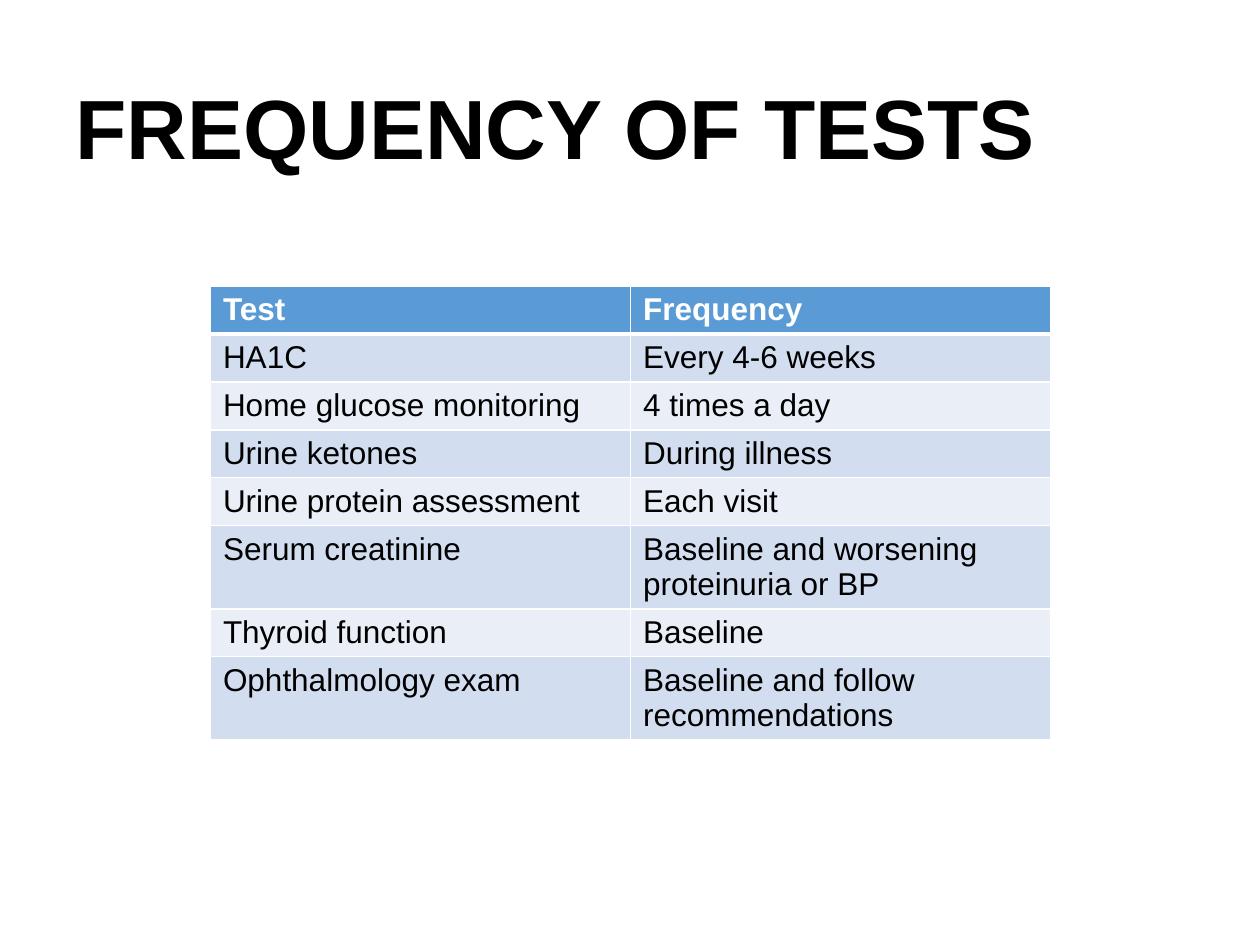
from dataclasses import dataclass

from lxml.etree import SubElement
from pptx import Presentation
from pptx.dml.color import RGBColor
from pptx.enum.text import MSO_ANCHOR, MSO_AUTO_SIZE, PP_ALIGN
from pptx.oxml.ns import qn
from pptx.util import Inches, Pt


@dataclass(frozen=True)
class Theme:
    face: str = "Arial"
    ink: str = "000000"
    paper: str = "FFFFFF"
    head: str = "5B9BD5"
    bands: tuple = ("D2DEEF", "EAEFF7")
    big: int = 48
    body: int = 18
    thin: int = 1
    thick: int = 3


THEME = Theme()
TITLE = "FREQUENCY OF TESTS"
TESTS = [
    ("Test", "Frequency"),
    ("HA1C", "Every 4-6 weeks"),
    ("Home glucose monitoring", "4 times a day"),
    ("Urine ketones", "During illness"),
    ("Urine protein assessment", "Each visit"),
    ("Serum creatinine", "Baseline and worsening proteinuria or BP"),
    ("Thyroid function", "Baseline"),
    ("Ophthalmology exam", "Baseline and follow recommendations"),
]


def apply(item, form):
    for name, value in form.items():
        setattr(item, name, value)


def style(font, size, color, bold):
    apply(font, {"name": THEME.face, "size": Pt(size), "bold": bold})
    font.color.rgb = RGBColor.from_string(color)


def add_title(slide, text):
    title = slide.shapes.title
    apply(title, {"left": Inches(0.5), "top": Inches(0.3),
                  "width": Inches(9), "height": Inches(1.5)})
    frame = title.text_frame
    frame.text = text
    apply(frame, {"word_wrap": True, "auto_size": MSO_AUTO_SIZE.NONE,
                  "vertical_anchor": MSO_ANCHOR.MIDDLE})
    para = frame.paragraphs[0]
    apply(para, {"alignment": PP_ALIGN.LEFT, "line_spacing": 0.9})
    style(para.runs[0].font, THEME.big, THEME.ink, True)


def add_edges(cell, widths):
    props = cell._tc.get_or_add_tcPr()
    for side, width in widths.items():
        line = SubElement(props, qn(f"a:ln{side}"), w=str(Pt(width)))
        fill = SubElement(line, qn("a:solidFill"))
        SubElement(fill, qn("a:srgbClr"), val=THEME.paper)


def fill_cell(cell, text, row):
    head = row == 0
    widths = dict.fromkeys("LRTB", THEME.thin)
    if head:
        widths["B"] = THEME.thick
    elif row == 1:
        widths["T"] = THEME.thick
    add_edges(cell, widths)
    color = THEME.head if head else THEME.bands[(row - 1) % 2]
    cell.fill.solid()
    cell.fill.fore_color.rgb = RGBColor.from_string(color)
    cell.text = text
    style(cell.text_frame.paragraphs[0].runs[0].font, THEME.body,
          THEME.paper if head else THEME.ink, head)


def add_grid(slide, data):
    table = slide.shapes.add_table(
        len(data), len(data[0]), Inches(1.67), Inches(2.27),
        Inches(6.67), Inches(0.32 * len(data))).table
    for row, texts in enumerate(data):
        for col, text in enumerate(texts):
            fill_cell(table.cell(row, col), text, row)


def main():
    deck = Presentation()
    apply(deck, {"slide_width": Inches(10), "slide_height": Inches(7.5)})
    slide = deck.slides.add_slide(deck.slide_layouts[5])
    add_title(slide, TITLE)
    add_grid(slide, TESTS)
    deck.save("out.pptx")


if __name__ == "__main__":
    main()
